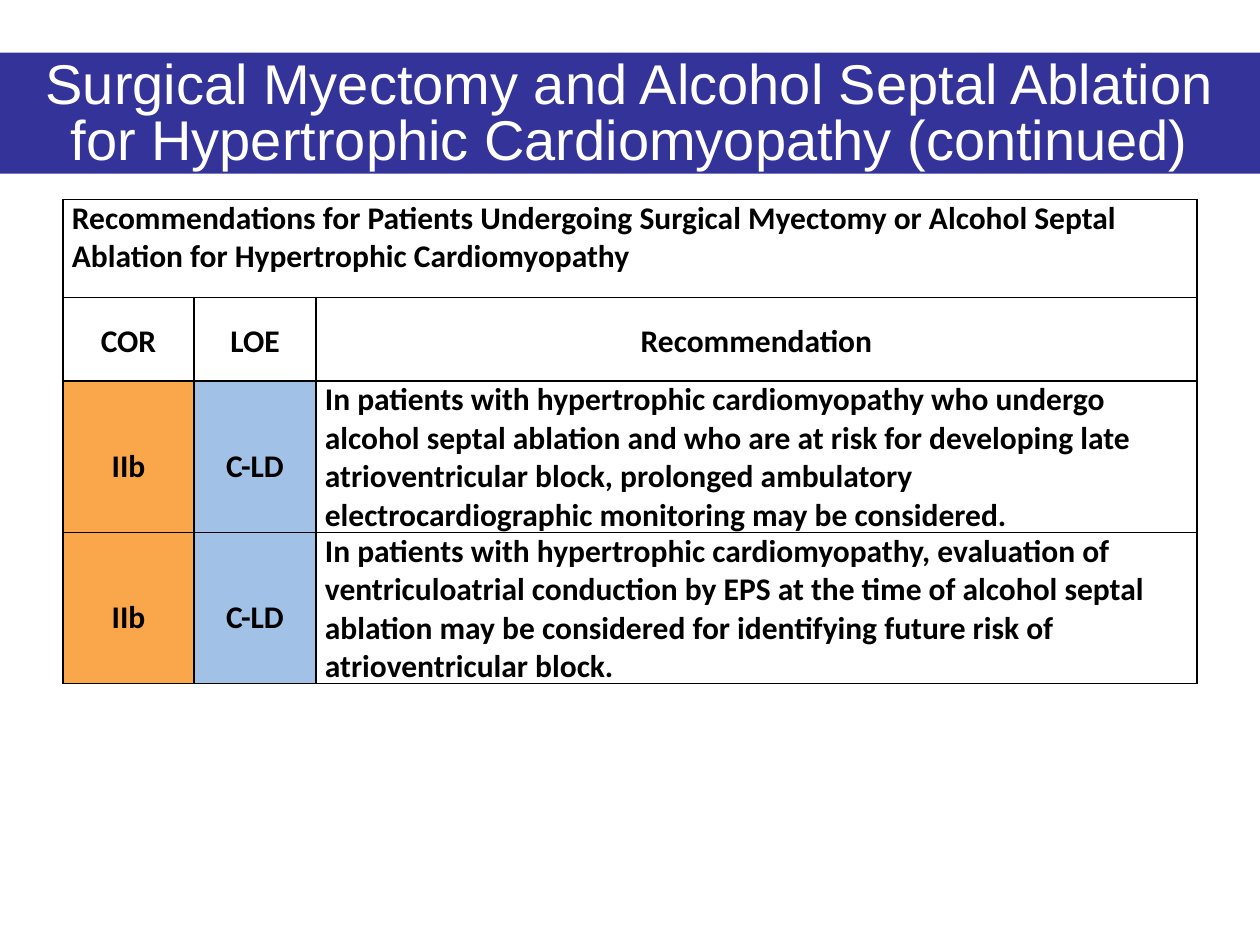
from dataclasses import dataclass
from typing import Optional

from lxml.etree import SubElement
from pptx import Presentation
from pptx.dml.color import RGBColor
from pptx.enum.text import MSO_ANCHOR, MSO_AUTO_SIZE, PP_ALIGN
from pptx.oxml.ns import qn
from pptx.util import Cm, Pt

NAVY = RGBColor(0x33, 0x33, 0x99)
WHITE = RGBColor(0xFF, 0xFF, 0xFF)
BLACK = RGBColor(0, 0, 0)
ORANGE = RGBColor(0xFA, 0xA7, 0x4B)
LIGHT_BLUE = RGBColor(0xA1, 0xC1, 0xE7)

COLUMN_WIDTHS = (2.64, 2.46, 17.76)
ROW_HEIGHTS = (1.98, 1.68, 3.05, 3.05)

TITLE = ("Surgical Myectomy and Alcohol Septal Ablation "
         "for Hypertrophic Cardiomyopathy (continued)")
TABLE_HEADING = ("Recommendations for Patients Undergoing Surgical Myectomy or "
                 "Alcohol Septal Ablation for Hypertrophic Cardiomyopathy")


@dataclass
class Recommendation:
    strength: str
    evidence: str
    text: str


RECOMMENDATIONS = (
    Recommendation("IIb", "C-LD",
                   "In patients with hypertrophic cardiomyopathy who undergo alcohol "
                   "septal ablation and who are at risk for developing late "
                   "atrioventricular block, prolonged ambulatory "
                   "electrocardiographic monitoring may be considered."),
    Recommendation("IIb", "C-LD",
                   "In patients with hypertrophic cardiomyopathy, evaluation of "
                   "ventriculoatrial conduction by EPS at the time of alcohol septal "
                   "ablation may be considered for identifying future risk of "
                   "atrioventricular block."),
)


def write_text(frame, text: str, *, font: str, size: float, color: RGBColor,
               bold: bool = False, align=PP_ALIGN.LEFT, spacing: float = 1.0) -> None:
    para = frame.paragraphs[0]
    para.alignment = align
    para.line_spacing = spacing
    span = para.add_run()
    span.text = text
    span.font.name = font
    span.font.size = Pt(size)
    span.font.bold = bold
    span.font.color.rgb = color


def style_cell(cell, fill: Optional[RGBColor] = None) -> None:
    """Set thin side margins, black borders and an optional fill."""
    cell.margin_left = cell.margin_right = Cm(0.18)
    cell.margin_top = cell.margin_bottom = 0
    properties = cell._tc.get_or_add_tcPr()
    for side in ("a:lnL", "a:lnR", "a:lnT", "a:lnB"):
        line = SubElement(properties, qn(side), w=str(Pt(1)))
        solid = SubElement(line, qn("a:solidFill"))
        SubElement(solid, qn("a:srgbClr"), val=str(BLACK))
    if fill is None:
        cell.fill.background()
    else:
        cell.fill.solid()
        cell.fill.fore_color.rgb = fill


def write_cell(cell, text: str, spacing: float = 1.0, centered: bool = False) -> None:
    cell.vertical_anchor = MSO_ANCHOR.MIDDLE if centered else MSO_ANCHOR.TOP
    write_text(cell.text_frame, text, font="Calibri", size=18, color=BLACK, bold=True,
               align=PP_ALIGN.CENTER if centered else PP_ALIGN.LEFT, spacing=spacing)


def add_title(page) -> None:
    title = page.shapes.title
    title.left, title.top, title.width, title.height = Cm(0), Cm(1.06), Cm(25.4), Cm(2.44)
    title.fill.solid()
    title.fill.fore_color.rgb = NAVY
    frame = title.text_frame
    frame.word_wrap = True
    frame.auto_size = MSO_AUTO_SIZE.SHAPE_TO_FIT_TEXT
    frame.vertical_anchor = MSO_ANCHOR.TOP
    write_text(frame, TITLE, font="Arial", size=32, color=WHITE,
               align=PP_ALIGN.CENTER, spacing=0.84)


def add_recommendation_table(page) -> None:
    table = page.shapes.add_table(
        len(ROW_HEIGHTS), len(COLUMN_WIDTHS), Cm(1.27), Cm(4.02),
        Cm(sum(COLUMN_WIDTHS)), Cm(sum(ROW_HEIGHTS))).table
    table.first_row = table.horz_banding = False
    for column, width in zip(table.columns, COLUMN_WIDTHS):
        column.width = Cm(width)
    for row, height in zip(table.rows, ROW_HEIGHTS):
        row.height = Cm(height)

    for row_index in range(len(ROW_HEIGHTS)):
        fills = (ORANGE, LIGHT_BLUE, None) if row_index >= 2 else (None,) * 3
        for column_index, fill in enumerate(fills):
            style_cell(table.cell(row_index, column_index), fill)

    table.cell(0, 0).merge(table.cell(0, 2))
    write_cell(table.cell(0, 0), TABLE_HEADING)
    for column_index, label in enumerate(("COR", "LOE", "Recommendation")):
        write_cell(table.cell(1, column_index), label, spacing=1.15, centered=True)
    for row_index, item in enumerate(RECOMMENDATIONS, start=2):
        write_cell(table.cell(row_index, 0), item.strength, spacing=1.5, centered=True)
        write_cell(table.cell(row_index, 1), item.evidence, spacing=1.5, centered=True)
        write_cell(table.cell(row_index, 2), item.text)


def main() -> None:
    deck = Presentation()
    deck.slide_width, deck.slide_height = Cm(25.4), Cm(19.05)
    page = deck.slides.add_slide(deck.slide_layouts.get_by_name("Title Only"))
    add_title(page)
    add_recommendation_table(page)
    deck.save("out.pptx")


if __name__ == "__main__":
    main()
